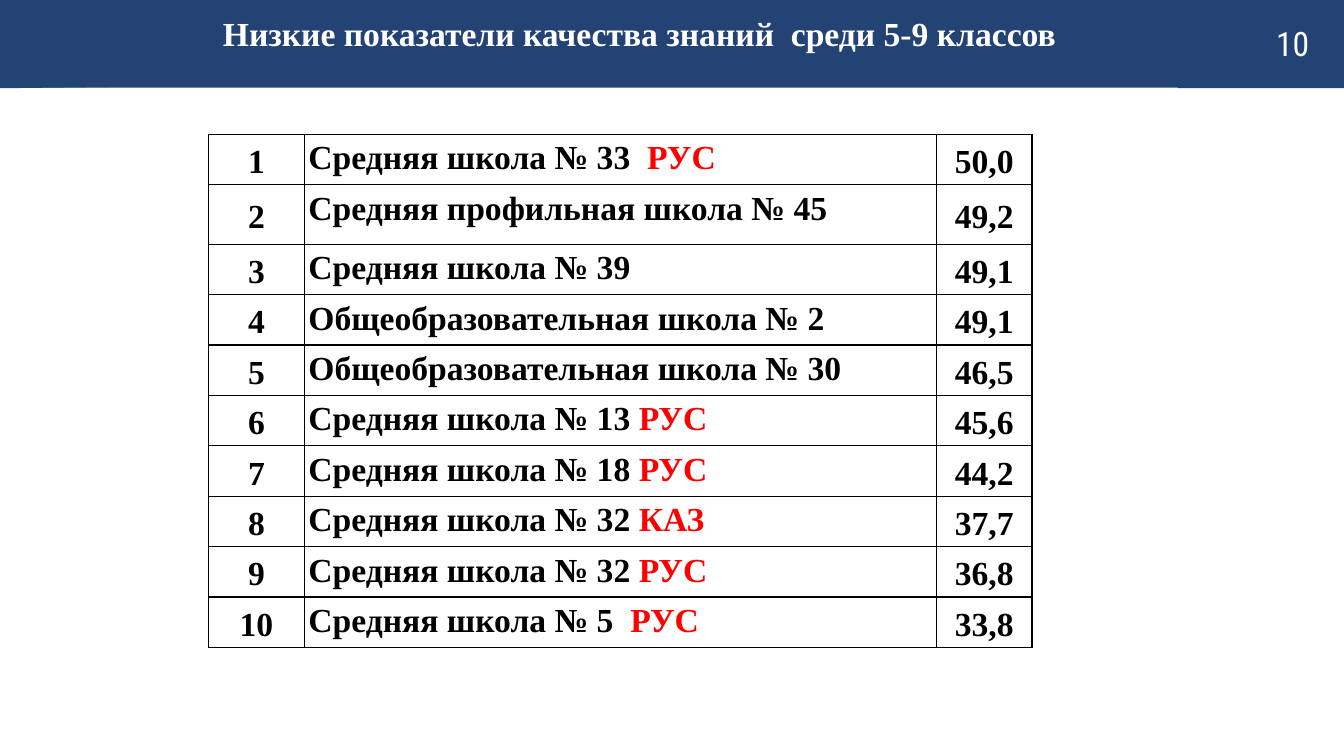
from dataclasses import dataclass

from lxml.etree import SubElement
from pptx import Presentation
from pptx.dml.color import RGBColor
from pptx.enum.shapes import MSO_SHAPE
from pptx.enum.text import MSO_ANCHOR, MSO_AUTO_SIZE, PP_ALIGN
from pptx.oxml.ns import qn
from pptx.util import Pt

NAVY, WHITE, BLACK, RED = "244375", "FFFFFF", "000000", "FF0000"
SERIF = {"name": "Times New Roman", "size": Pt(24), "bold": True}
CONDENSED = {"name": "Roboto Condensed", "size": Pt(24), "bold": False}
CELL_MARGINS = {
    "margin_left": Pt(2.9),
    "margin_right": Pt(2.9),
    "margin_top": 0,
    "margin_bottom": 0,
}
COLUMN_WIDTHS = (68.4, 451.4, 68.4)
ROW_HEIGHT, TALL_ROW_HEIGHT, TALL_ROW = 36, 42.5, 1


@dataclass(frozen=True)
class School:
    name: str
    quality: str
    language: str = ""


SCHOOLS = (
    School("Средняя школа № 33  ", "50,0", "РУС"),
    School("Средняя профильная школа № 45", "49,2"),
    School("Средняя школа № 39", "49,1"),
    School("Общеобразовательная школа № 2", "49,1"),
    School("Общеобразовательная школа № 30", "46,5"),
    School("Средняя школа № 13 ", "45,6", "РУС"),
    School("Средняя школа № 18 ", "44,2", "РУС"),
    School("Средняя школа № 32 ", "37,7", "КАЗ"),
    School("Средняя школа № 32 ", "36,8", "РУС"),
    School("Средняя школа № 5  ", "33,8", "РУС"),
)
BANNER_CORNERS = (
    ((119.5, 0), (0, 0), (0, 62.6), (90.7, 61.9)),
    ((960, 0.7), (869.8, 0.7), (841, 62.6), (960, 62.6)),
)


def apply(target, values: dict) -> None:
    for attribute, value in values.items():
        setattr(target, attribute, value)


def colour(fmt, hex_value: str) -> None:
    if hasattr(fmt, "solid"):
        fmt.solid()
        fmt.fore_color.rgb = RGBColor.from_string(hex_value)
    else:
        fmt.color.rgb = RGBColor.from_string(hex_value)


def write(paragraph, text: str, hex_value: str, font: dict) -> None:
    run = paragraph.add_run()
    run.text = text
    apply(run.font, font)
    colour(run.font, hex_value)


def paint_banner(shape) -> None:
    shape.shadow.inherit = False
    colour(shape.fill, NAVY)
    shape.line.fill.background()


def draw_banner(slide) -> None:
    paint_banner(slide.shapes.add_shape(MSO_SHAPE.RECTANGLE, 0, 0, Pt(960), Pt(62.6)))
    for start, *corners in BANNER_CORNERS:
        outline = slide.shapes.build_freeform(*start, scale=Pt(1))
        outline.add_line_segments(corners, close=True)
        paint_banner(outline.convert_to_shape())


def place_title(slide) -> None:
    title = slide.shapes.title
    apply(title, {"left": Pt(149), "top": Pt(5.8), "width": Pt(615.6), "height": Pt(36)})
    apply(title.text_frame, {
        "word_wrap": False,
        "auto_size": MSO_AUTO_SIZE.SHAPE_TO_FIT_TEXT,
        "vertical_anchor": MSO_ANCHOR.TOP,
    })
    heading = title.text_frame.paragraphs[0]
    heading.alignment = PP_ALIGN.CENTER
    write(heading, "Низкие показатели качества знаний  среди 5-9 классов", WHITE, SERIF)
    title.element.getparent().append(title.element)


def place_page_number(slide) -> None:
    frame = slide.shapes.add_textbox(Pt(910.8), Pt(15.8), Pt(37.4), Pt(30.2)).text_frame
    apply(frame, {
        "margin_left": Pt(0.7),
        "margin_right": 0,
        "margin_top": Pt(0.7),
        "margin_bottom": 0,
        "word_wrap": True,
        "auto_size": MSO_AUTO_SIZE.SHAPE_TO_FIT_TEXT,
    })
    write(frame.paragraphs[0], "10", WHITE, CONDENSED)


def outline_cell(cell) -> None:
    properties = cell._tc.get_or_add_tcPr()
    for side in ("lnL", "lnR", "lnT", "lnB"):
        border = SubElement(properties, qn(f"a:{side}"), w=str(Pt(1)))
        fill = SubElement(border, qn("a:solidFill"))
        SubElement(fill, qn("a:srgbClr"), val=BLACK)


def fill_cell(cell, text: str, language: str, centred: bool) -> None:
    outline_cell(cell)
    cell.fill.background()
    apply(cell, CELL_MARGINS)
    cell.vertical_anchor = MSO_ANCHOR.MIDDLE if centred else MSO_ANCHOR.TOP
    paragraph = cell.text_frame.paragraphs[0]
    apply(paragraph, {
        "alignment": PP_ALIGN.CENTER if centred else PP_ALIGN.LEFT,
        "line_spacing": 1.15,
    })
    write(paragraph, text, BLACK, SERIF)
    if language:
        write(paragraph, language, RED, SERIF)


def draw_ranking(slide) -> None:
    height = ROW_HEIGHT * (len(SCHOOLS) - 1) + TALL_ROW_HEIGHT
    ranking = slide.shapes.add_table(
        len(SCHOOLS), len(COLUMN_WIDTHS),
        Pt(149), Pt(95.9), Pt(sum(COLUMN_WIDTHS)), Pt(height),
    ).table
    apply(ranking, {"first_row": False, "horz_banding": False})
    for column, width in zip(ranking.columns, COLUMN_WIDTHS):
        column.width = Pt(width)
    for index, school in enumerate(SCHOOLS):
        row = ranking.rows[index]
        row.height = Pt(TALL_ROW_HEIGHT if index == TALL_ROW else ROW_HEIGHT)
        place, name, quality = row.cells
        fill_cell(place, str(index + 1), "", True)
        fill_cell(name, school.name, school.language, False)
        fill_cell(quality, school.quality, "", True)


def main() -> None:
    presentation = Presentation()
    apply(presentation, {"slide_width": Pt(960), "slide_height": Pt(540)})
    slide = presentation.slides.add_slide(presentation.slide_layouts[5])
    draw_banner(slide)
    place_page_number(slide)
    place_title(slide)
    draw_ranking(slide)
    presentation.save("out.pptx")


if __name__ == "__main__":
    main()
